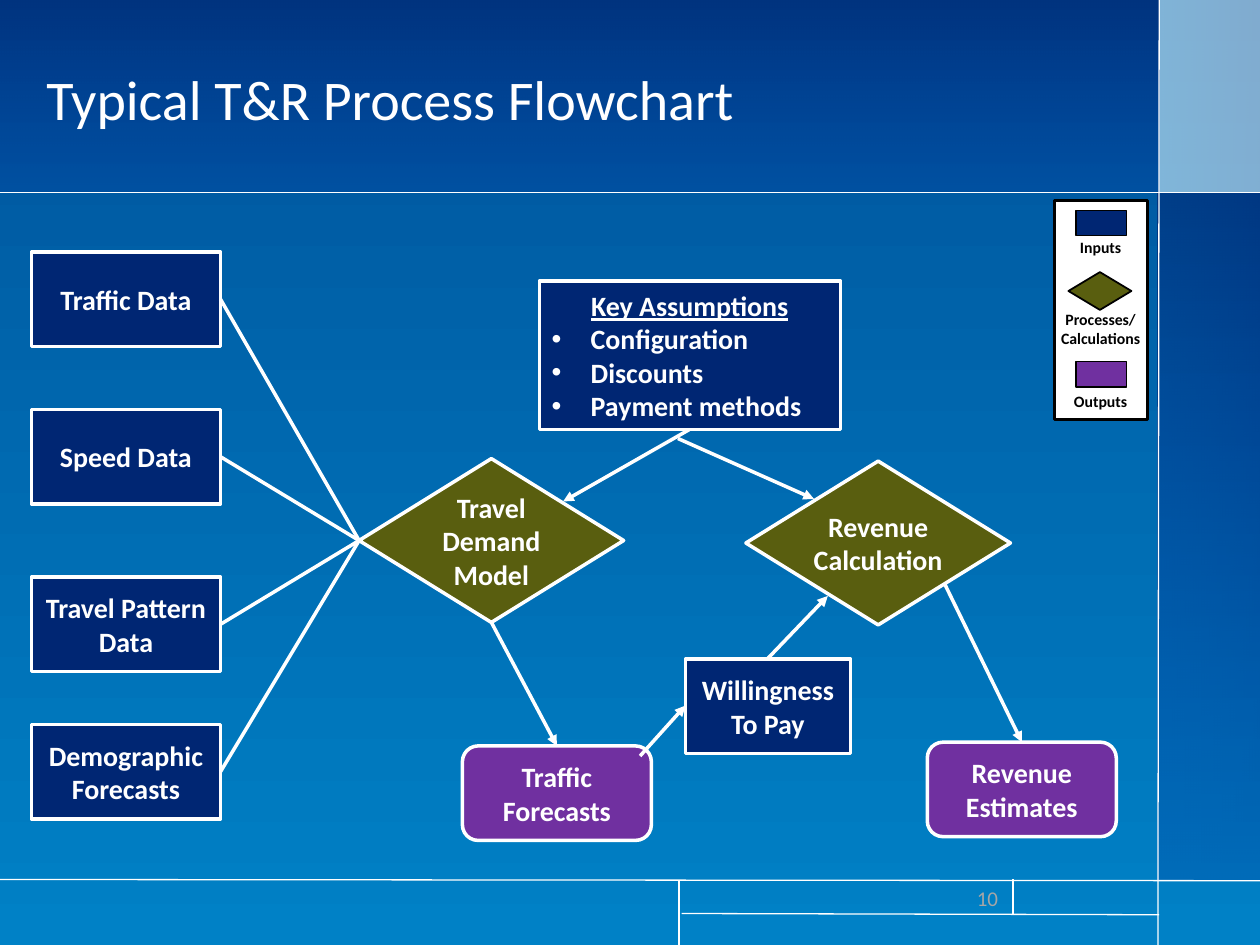
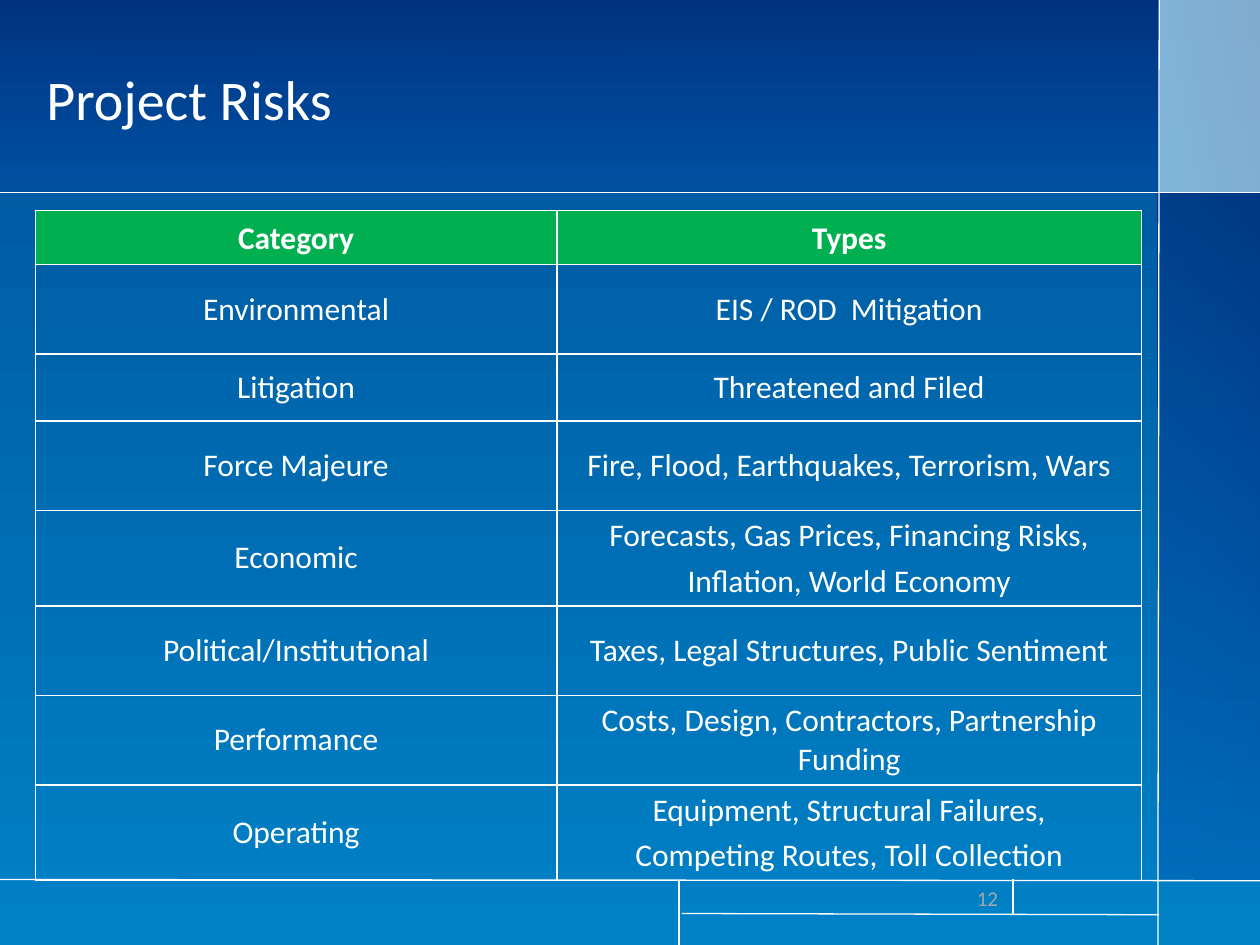
"""Builds two slides on toll traffic and revenue: a process flowchart and a risk table."""
from dataclasses import dataclass

from lxml import etree
from pptx import Presentation
from pptx import util as u
from pptx.dml.color import RGBColor
from pptx.enum import shapes, text
from pptx.oxml import ns


@dataclass(frozen=True)
class Theme:
    """Colours, font, type sizes and line widths of both slides."""
    font: str = "Calibri"
    white: str = "FFFFFF"
    black: str = "000000"
    sky: str = "0081C6"
    ocean: str = "00539B"
    navy: str = "002673"
    royal: str = "003399"
    olive: str = "595E0F"
    purple: str = "7030A0"
    green: str = "00B050"
    gray: str = "A6A6A6"
    title_size: int = 32
    table_size: int = 18
    node_size: int = 16
    number_size: int = 12
    legend_size: int = 9
    rule_width: float = 0.75
    flow_width: float = 2


THEME = Theme()
SHAPE = shapes.MSO_SHAPE
ALIGN = text.PP_ALIGN
ANCHOR = text.MSO_ANCHOR
TOP, LEFT, BOTTOM, RIGHT = range(4)

RISKS = [
    ("Environmental", "EIS / ROD  Mitigation", 0.71),
    ("Litigation", "Threatened and Filed", 0.53),
    ("Force Majeure", "Fire, Flood, Earthquakes, Terrorism, Wars", 0.71),
    ("Economic", "Forecasts, Gas Prices, Financing Risks,\nInflation, World Economy", 0.76),
    ("Political/Institutional", "Taxes, Legal Structures, Public Sentiment", 0.71),
    ("Performance", "Costs, Design, Contractors, Partnership Funding", 0.71),
    ("Operating", "Equipment, Structural Failures,\nCompeting Routes, Toll Collection", 0.76),
]


def inches(values):
    """Turns numbers into lengths."""
    return [u.Inches(value) for value in values]


def add_element(parent, tag, **attributes):
    """Appends a drawing element with the given attributes."""
    return etree.SubElement(parent, ns.qn(tag), attributes)


def add_colour(parent, colour, opacity=100):
    """Appends a colour with its opacity in percent."""
    element = add_element(parent, "a:srgbClr", val=colour)
    if opacity < 100:
        add_element(element, "a:alpha", val=str(opacity * 1000))


def style_text(frame, size, colour, bold=False, align=ALIGN.LEFT):
    """Formats every paragraph of a text frame."""
    for paragraph in frame.paragraphs:
        paragraph.alignment = align
        for run in paragraph.runs:
            run.font.name = THEME.font
            run.font.size = u.Pt(size)
            run.font.bold = bold
            run.font.color.rgb = RGBColor.from_string(colour)


def add_text(slide, box, words, size, colour, bold=False, align=ALIGN.LEFT, anchor=ANCHOR.MIDDLE):
    """Adds a wrapping text box and returns its frame."""
    frame = slide.shapes.add_textbox(*inches(box)).text_frame
    frame.word_wrap = True
    frame.vertical_anchor = anchor
    frame.text = words
    style_text(frame, size, colour, bold, align)
    return frame


def add_panel(slide, box, stops, angle=0):
    """Adds a borderless rectangle with one or two (colour, opacity) stops."""
    panel = slide.shapes.add_shape(SHAPE.RECTANGLE, *inches(box))
    panel.shadow.inherit = False
    panel.line.fill.background()
    panel.fill.background()
    blank = panel.element.spPr.find(ns.qn("a:noFill"))
    if len(stops) == 1:
        fill = etree.Element(ns.qn("a:solidFill"))
        add_colour(fill, *stops[0])
    else:
        fill = etree.Element(ns.qn("a:gradFill"), rotWithShape="1")
        stop_list = add_element(fill, "a:gsLst")
        for position, stop in zip(("0", "100000"), stops):
            add_colour(add_element(stop_list, "a:gs", pos=position), *stop)
        add_element(fill, "a:lin", ang=str(angle * 60000), scaled="0")
    panel.element.spPr.replace(blank, fill)


def add_line(slide, start, end, width=THEME.flow_width, arrow=False):
    """Adds a straight white line, with an arrowhead at its end on request."""
    line = slide.shapes.add_connector(shapes.MSO_CONNECTOR.STRAIGHT, *inches(start + end))
    line.line.width = u.Pt(width)
    line.line.color.rgb = RGBColor.from_string(THEME.white)
    properties = line.element.spPr
    if arrow:
        add_element(properties.find(ns.qn("a:ln")), "a:tailEnd", type="triangle")
    add_element(properties, "a:effectLst")
    return line


def link(slide, begin, begin_site, end, end_site, arrow=False):
    """Joins two shapes by a line glued to their connection sites."""
    line = add_line(slide, (0, 0), (1, 1), arrow=arrow)
    line.begin_connect(begin, begin_site)
    line.end_connect(end, end_site)


def add_node(slide, kind, box, fill, words="", outline=THEME.white, width=THEME.flow_width):
    """Adds a flowchart shape with centred bold text."""
    node = slide.shapes.add_shape(kind, *inches(box))
    node.shadow.inherit = False
    node.fill.solid()
    node.fill.fore_color.rgb = RGBColor.from_string(fill)
    node.line.color.rgb = RGBColor.from_string(outline)
    node.line.width = u.Pt(width)
    frame = node.text_frame
    frame.word_wrap = True
    frame.vertical_anchor = ANCHOR.MIDDLE
    if kind == SHAPE.FLOWCHART_DECISION:
        frame.margin_left = frame.margin_right = frame.margin_top = frame.margin_bottom = 0
    frame.text = words
    style_text(frame, THEME.node_size, THEME.white, True, ALIGN.CENTER)
    return node


def add_bullet(paragraph):
    """Gives a paragraph a hanging round bullet."""
    properties = paragraph._p.get_or_add_pPr()
    indent = u.Inches(0.31)
    properties.set("marL", str(indent))
    properties.set("indent", str(-indent))
    add_element(properties, "a:buFont", typeface="Arial")
    add_element(properties, "a:buChar", char="•")


def add_base_slide(presentation, title, number):
    """Adds a slide with the shared bands, rules, title and slide number."""
    slide = presentation.slides.add_slide(presentation.slide_layouts[6])
    glass = [(THEME.sky, 50), (THEME.sky, 10)]
    shade = [(THEME.navy, 70), (THEME.royal, 25)]
    add_panel(slide, (0, 0, 10, 7.5), [(THEME.ocean, 100), (THEME.sky, 100)], 90)
    add_panel(slide, (9.2, 0, 0.8, 7), glass)
    add_panel(slide, (9.2, 0, 0.8, 1.53), [(THEME.white, 50)])
    add_panel(slide, (9.2, 1.53, 0.8, 5.47), glass)
    add_panel(slide, (0, 0, 9.2, 1.53), shade, 90)
    add_panel(slide, (9.19, 1.53, 0.81, 5.46), shade, 90)
    for start, end in [
        ((5.41, 7.25), (9.2, 7.26)),
        ((5.39, 7.5), (5.39, 6.99)),
        ((8.04, 6.98), (8.04, 7.26)),
        ((9.2, 0), (9.19, 7.5)),
        ((0, 1.53), (10, 1.53)),
        ((0, 6.98), (10, 6.99)),
    ]:
        add_line(slide, start, end, THEME.rule_width)
    add_text(slide, (0.27, 0, 8.9, 1.55), title, THEME.title_size, THEME.white)
    add_text(slide, (7.21, 7.01, 0.81, 0.23), str(number), THEME.number_size, THEME.gray,
             align=ALIGN.RIGHT)
    return slide


def add_assumptions(slide):
    """Adds the box of key assumptions with its bulleted list."""
    box = add_node(slide, SHAPE.FLOWCHART_PROCESS, (4.28, 2.23, 2.39, 1.18), THEME.navy,
                   "Key Assumptions\nConfiguration\nDiscounts\nPayment methods")
    heading, *items = box.text_frame.paragraphs
    heading.runs[0].font.underline = True
    for item in items:
        item.alignment = ALIGN.LEFT
        add_bullet(item)


def add_legend(slide):
    """Adds the key to the three kinds of flowchart shape."""
    add_node(slide, SHAPE.RECTANGLE, (8.37, 1.59, 0.74, 1.74), THEME.white,
             outline=THEME.black, width=1.5)
    process, decision = SHAPE.FLOWCHART_PROCESS, SHAPE.FLOWCHART_DECISION
    for kind, sample, fill, label, top, height in [
        (process, (8.54, 1.67, 0.4, 0.2), THEME.navy, "Inputs", 1.84, 0.25),
        (decision, (8.48, 2.16, 0.5, 0.3), THEME.olive, "Processes/ Calculations", 2.41, 0.4),
        (process, (8.54, 2.87, 0.4, 0.2), THEME.purple, "Outputs", 3.06, 0.25),
    ]:
        add_node(slide, kind, sample, fill, outline=THEME.black, width=1)
        frame = add_text(slide, (8.36, top, 0.75, height), label, THEME.legend_size,
                         THEME.black, True, ALIGN.CENTER, ANCHOR.TOP)
        frame.margin_left = frame.margin_right = 0


def add_flowchart(slide):
    """Adds the process steps and the lines that join them."""
    process, decision = SHAPE.FLOWCHART_PROCESS, SHAPE.FLOWCHART_DECISION
    output = SHAPE.FLOWCHART_ALTERNATE_PROCESS
    demand = add_node(slide, decision, (2.85, 3.64, 2.1, 1.3), THEME.olive, "Travel Demand Model")
    add_node(slide, decision, (5.92, 3.66, 2.1, 1.3), THEME.olive, "Revenue Calculation")
    for label, top in [("Traffic Data", 2), ("Speed Data", 3.25),
                       ("Travel Pattern Data", 4.58), ("Demographic Forecasts", 5.75)]:
        source = add_node(slide, process, (0.25, top, 1.5, 0.75), THEME.navy, label)
        link(slide, source, RIGHT, demand, LEFT)
    add_assumptions(slide)
    forecasts = add_node(slide, output, (3.67, 5.92, 1.5, 0.75), THEME.purple, "Traffic Forecasts")
    add_node(slide, output, (7.36, 5.89, 1.5, 0.75), THEME.purple, "Revenue Estimates")
    add_node(slide, process, (5.44, 5.23, 1.31, 0.75), THEME.navy, "Willingness\nTo Pay")
    link(slide, demand, BOTTOM, forecasts, TOP, arrow=True)
    for start, end in [
        ((5.47, 3.41), (4.47, 3.98)),
        ((5.38, 3.48), (6.46, 3.96)),
        ((5.08, 6), (5.44, 5.6)),
        ((6.09, 5.23), (6.57, 4.73)),
        ((7.5, 4.64), (8.11, 5.89)),
    ]:
        add_line(slide, start, end, arrow=True)


def fill_cell(cell, words, header):
    """Writes a table cell and gives it white borders."""
    properties = cell._tc.get_or_add_tcPr()
    for side in ("a:lnL", "a:lnR", "a:lnT", "a:lnB"):
        border = add_element(properties, side, w=str(u.Pt(1)))
        add_colour(add_element(border, "a:solidFill"), THEME.white)
    if header:
        cell.fill.solid()
        cell.fill.fore_color.rgb = RGBColor.from_string(THEME.green)
    else:
        cell.fill.background()
    cell.vertical_anchor = ANCHOR.BOTTOM if header else ANCHOR.MIDDLE
    cell.text_frame.text = words
    style_text(cell.text_frame, THEME.table_size, THEME.white, header, ALIGN.CENTER)
    for paragraph in cell.text_frame.paragraphs[1:]:
        paragraph.space_before = u.Pt(4)


def add_risk_table(slide):
    """Adds the table of risk categories and types."""
    rows = [("Category", "Types", 0.43), *RISKS]
    table = slide.shapes.add_table(len(rows), 2, *inches((0.28, 1.67, 8.78, 5.32))).table
    table.first_row = table.horz_banding = False
    for column, width in zip(table.columns, inches((4.14, 4.64))):
        column.width = width
    for index, (category, types, height) in enumerate(rows):
        table.rows[index].height = u.Inches(height)
        for column, words in enumerate((category, types)):
            fill_cell(table.cell(index, column), words, header=index == 0)


def main():
    """Builds and saves the presentation."""
    presentation = Presentation()
    presentation.slide_width, presentation.slide_height = inches((10, 7.5))
    flowchart_slide = add_base_slide(presentation, "Typical T&R Process Flowchart", 10)
    add_flowchart(flowchart_slide)
    add_legend(flowchart_slide)
    add_risk_table(add_base_slide(presentation, "Project Risks", 12))
    presentation.save("out.pptx")


if __name__ == "__main__":
    main()
